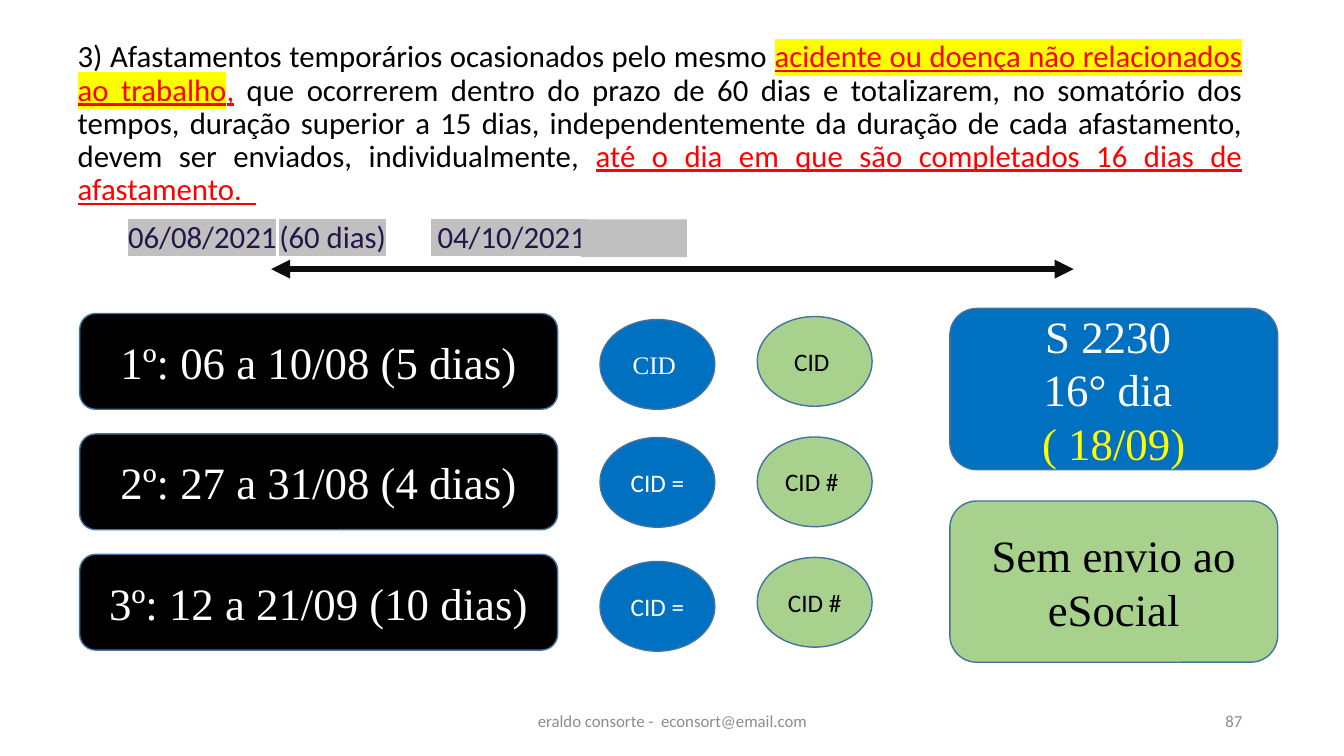
"""Build the slide on adding up sick leaves within a 60-day window."""
from lxml.etree import SubElement
from pptx import Presentation
from pptx.dml.color import RGBColor
from pptx.enum.shapes import MSO_CONNECTOR, MSO_SHAPE
from pptx.enum.text import MSO_ANCHOR, MSO_AUTO_SIZE, PP_ALIGN
from pptx.oxml.ns import qn
from pptx.util import Inches, Pt

INK = {"black": "000000", "white": "FFFFFF", "red": "FF0000", "yellow": "FFFF00",
       "blue": "0070C0", "green": "A9D18E", "edge": "43739E", "navy": "24154B",
       "silver": "C0C0C0", "gray": "8C8C8C", "dark": "0D0D0D"}
SERIF, SANS = "Times New Roman", "Calibri"

deck = Presentation()
deck.slide_width, deck.slide_height = Inches(13.33), Inches(7.5)
slide = deck.slides.add_slide(deck.slide_layouts[1])
shapes = slide.shapes


def grid(x, y, w, h):
    """Turn percent shares of the slide into left, top, width, height."""
    col, row = deck.slide_width / 100, deck.slide_height / 100
    return int(x * col), int(y * row), int(w * col), int(h * row)


def style(part, size, face, ink):
    """Format the font of a run."""
    part.font.size, part.font.name = Pt(size), face
    part.font.color.rgb = RGBColor.from_string(INK[ink])


title = shapes.title.element
title.getparent().remove(title)

body = shapes.placeholders[1]
body.left, body.top, body.width, body.height = grid(5.03, 4.8, 88.15, 93.2)
frame = body.text_frame
frame.auto_size = MSO_AUTO_SIZE.NONE
frame.vertical_anchor = MSO_ANCHOR.TOP

rule = [
    ("3) Afastamentos temporários ocasionados pelo mesmo ", "black", None),
    ("acidente ou doença não relacionados ao trabalho", "red", "yellow"),
    (",", "red", None),
    (" que ocorrerem dentro do prazo de 60 dias e totalizarem, no somatório dos tempos, "
     "duração superior a 15 dias, independentemente da duração de cada afastamento, "
     "devem ser enviados, individualmente, ", "black", None),
    ("até o dia em que são completados 16 dias de afastamento.  ", "red", None),
]
dates = [
    ("\t", "navy", None), ("06/08/2021", "navy", "silver"),
    ("\t", "navy", None), ("(60 dias)", "navy", "silver"),
    ("\t", "navy", None), (" 04/10/2021", "navy", "silver"),
]
for para, parts in ((frame.paragraphs[0], rule), (frame.add_paragraph(), dates)):
    para.alignment = PP_ALIGN.JUSTIFY
    para.line_spacing, para.space_before = 0.9, Pt(10)
    props = para._p.get_or_add_pPr()
    props.set("marL", "0")
    props.set("indent", "0")
    SubElement(props, qn("a:buNone"))
    for text, ink, mark in parts:
        run = para.add_run()
        run.text = text
        style(run, 22, SANS, ink)
        run.font.underline = ink == "red"
        if mark:
            glow = SubElement(run._r.rPr, qn("a:highlight"))
            SubElement(glow, qn("a:srgbClr"), val=INK[mark])
            run._r.rPr.find(qn("a:solidFill")).addnext(glow)
stops = SubElement(props, qn("a:tabLst"))
for stop in (1.16, 6.04, 8.99):
    SubElement(stops, qn("a:tab"), pos=str(Inches(stop)), algn="l")

band = shapes.add_shape(MSO_SHAPE.RECTANGLE, *grid(43.21, 29, 7.9, 5))
band.shadow.inherit = False
band.fill.solid()
band.fill.fore_color.rgb = RGBColor.from_string(INK["silver"])
band.line.fill.background()

left, top, wide, _ = grid(20.18, 35.6, 59.7, 0)
span = shapes.add_connector(MSO_CONNECTOR.STRAIGHT, left, top, left + wide, top)
span.line.width = Pt(4.5)
span.line.color.rgb = RGBColor.from_string(INK["dark"])
for end in ("a:headEnd", "a:tailEnd"):
    SubElement(span.line._ln, qn(end), type="triangle")
SubElement(span._element.spPr, qn("a:effectLst"))

ROUND, OVAL = MSO_SHAPE.ROUNDED_RECTANGLE, MSO_SHAPE.OVAL
cards = [
    (ROUND, (70.67, 40.8, 24.4, 21.33), "S 2230 \n16° dia \n( 18/09)", "blue", "white", 32, SERIF),
    (ROUND, (70.67, 66.27, 24.4, 21.33), "Sem envio ao eSocial", "green", "black", 32, SERIF),
]
rows = [
    ("1º: 06 a 10/08 (5 dias)", "CID ", "CID ", 42.27, SERIF),
    ("2º: 27 a 31/08 (4 dias)", "CID =", "CID # ", 57.87, SANS),
    ("3º: 12 a 21/09 (10 dias)", "CID =", "CID #", 74.27, SANS),
]
for i, (leave, same, other, y, face) in enumerate(rows):
    step = 15.93 * i
    cards += [
        (ROUND, (5.93, 41.47 + step, 35.56, 12.67), leave, "black", "white", 32, SERIF),
        (OVAL, (44.64, y, 8.55, 11.87), same, "blue", "white", 18, face),
        (OVAL, (56.34, 41.87 + step, 8.55, 11.87), other, "green", "black", 18, SANS),
    ]
for kind, place, text, fill, ink, size, face in cards:
    card = shapes.add_shape(kind, *grid(*place))
    card.shadow.inherit = False
    card.fill.solid()
    card.fill.fore_color.rgb = RGBColor.from_string(INK[fill])
    card.line.color.rgb = RGBColor.from_string(INK["edge"])
    card.line.width = Pt(1)
    card.text_frame.text = text
    card.text_frame.vertical_anchor = MSO_ANCHOR.MIDDLE
    for para in card.text_frame.paragraphs:
        para.alignment = PP_ALIGN.CENTER
        style(para.runs[0], size, face, "yellow" if "18/09" in para.text else ink)

for x, w, text, side in (
    (33.16, 33.76, "eraldo consorte -  econsort@email.com", PP_ALIGN.CENTER),
    (70.67, 22.5, "87", PP_ALIGN.RIGHT),
):
    foot = shapes.add_textbox(*grid(x, 92.67, w, 5.33)).text_frame
    foot.word_wrap = True
    foot.vertical_anchor = MSO_ANCHOR.MIDDLE
    foot.text = text
    foot.paragraphs[0].alignment = side
    style(foot.paragraphs[0].runs[0], 12, SANS, "gray")

deck.save("out.pptx")
